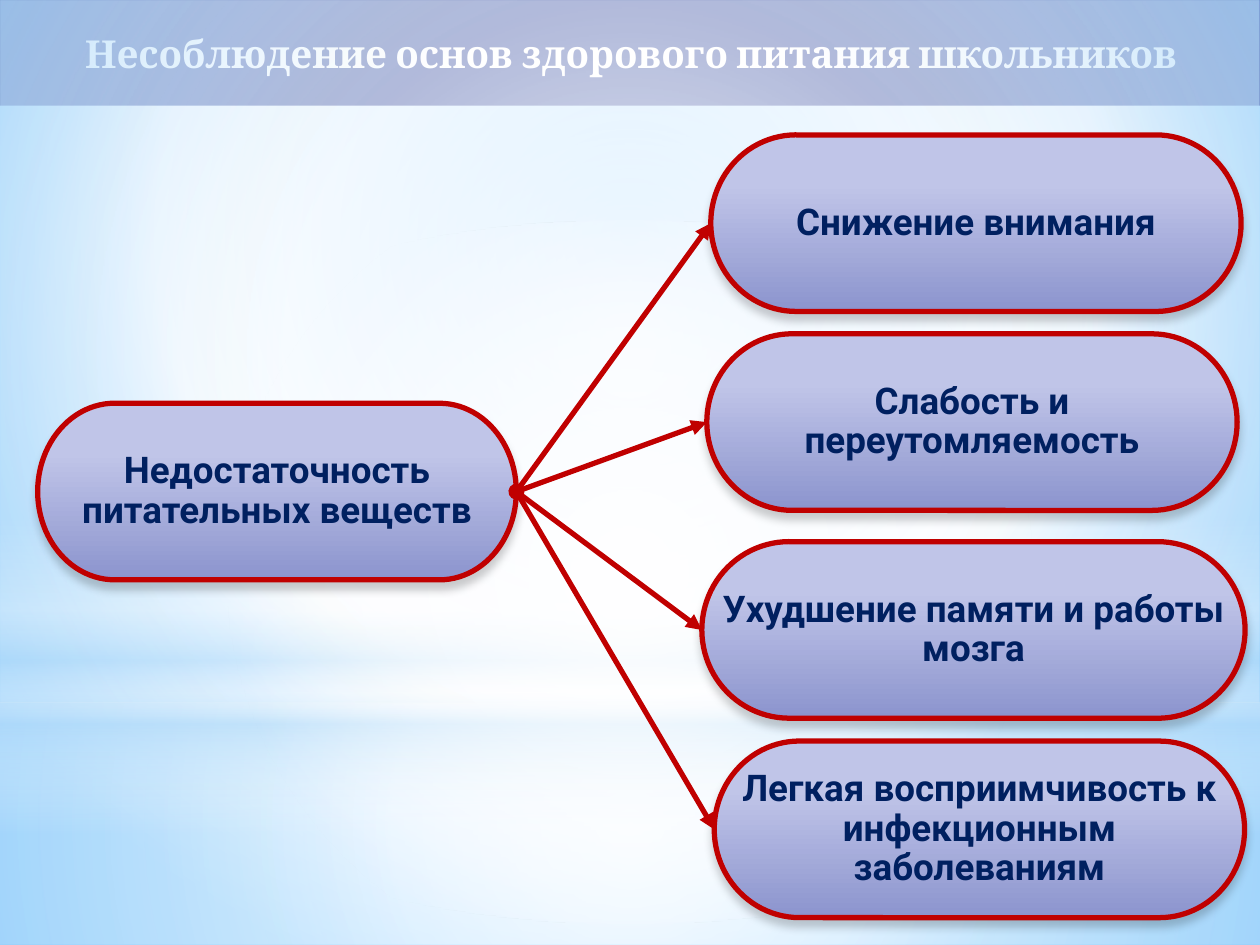
from dataclasses import dataclass
from typing import Optional

from lxml import etree
from pptx import Presentation
from pptx.dml.color import RGBColor
from pptx.enum.shapes import MSO_CONNECTOR, MSO_SHAPE
from pptx.enum.text import MSO_ANCHOR, MSO_AUTO_SIZE, PP_ALIGN
from pptx.oxml.ns import qn
from pptx.util import Cm, Pt

RECTANGLE, OVAL = MSO_SHAPE.RECTANGLE, MSO_SHAPE.OVAL
TERMINATOR = MSO_SHAPE.FLOWCHART_TERMINATOR
STRAIGHT = MSO_CONNECTOR.STRAIGHT
CENTER, MIDDLE = PP_ALIGN.CENTER, MSO_ANCHOR.MIDDLE
NO_AUTOFIT = MSO_AUTO_SIZE.NONE
LEFT_SITE, RIGHT_SITE = 1, 3
PAGE_WIDTH, PAGE_HEIGHT = 25.4, 19.05
PILL_HEIGHT = 3.56


@dataclass(frozen=True)
class Theme:
    banner: str = "31489F"
    title_text: str = "FFFFFF"
    label_text: str = "002060"
    accent: str = "C00000"
    pill_top: str = "C0C5E8"
    pill_bottom: str = "8C94CE"
    shadow: str = "000000"
    white: str = "FFFFFF"
    haze: str = "B4DCFA"
    sky_center: str = "9ED5FF"
    sky_edge: str = "5BB9FF"
    title_font: str = "Cambria"
    label_font: str = "Roboto"
    title_size: int = 22
    label_size: int = 21
    line_width: int = 3


THEME = Theme()


@dataclass(frozen=True)
class Stop:
    position: int
    color: str
    opacity: int = 100


@dataclass(frozen=True)
class Gradient:
    stops: tuple[Stop, ...]
    focus: Optional[tuple[int, int, int, int]] = None


@dataclass(frozen=True)
class Layer:
    shape_type: MSO_SHAPE
    top: float
    height: float
    gradient: Gradient


@dataclass(frozen=True)
class Pill:
    text: str
    left: float
    top: float
    width: float = 10.69
    arrow_start: str = "oval"


CENTERED = (50, 50, 50, 50)
SKY = Gradient(
    (Stop(0, THEME.sky_center), Stop(60, THEME.white), Stop(100, THEME.sky_edge)),
    (20, 10, 20, 60),
)
PILL_FILL = Gradient((Stop(28, THEME.pill_top), Stop(100, THEME.pill_bottom)))
LAYERS = (
    Layer(RECTANGLE, 14.17, 4.88, Gradient(
        (Stop(0, THEME.white, 91), Stop(37, THEME.white, 76), Stop(100, THEME.haze, 79)),
        CENTERED)),
    Layer(RECTANGLE, 0, 14.17, Gradient(
        (Stop(0, THEME.white, 89), Stop(48, THEME.white, 62), Stop(100, THEME.haze, 79)),
        CENTERED)),
    Layer(RECTANGLE, 10.46, 6.35, Gradient(
        (Stop(0, THEME.white, 0), Stop(29, THEME.white, 30), Stop(45, THEME.haze, 40),
         Stop(55, THEME.white, 26), Stop(65, THEME.haze, 60), Stop(100, THEME.white, 0)))),
    Layer(OVAL, 4.45, 14.17, Gradient(
        (Stop(0, THEME.white), Stop(56, THEME.white, 0)), CENTERED)),
)
CAUSE = Pill("Недостаточность питательных веществ", 0.76, 8.13, 9.65)
EFFECTS = (
    Pill("Снижение внимания", 14.33, 2.72),
    Pill("Слабость и переутомляемость", 14.25, 6.73),
    Pill("Ухудшение памяти и работы мозга", 14.15, 10.92, 10.95, "diamond"),
    Pill("Легкая восприимчивость к инфекционным заболеваниям", 14.4, 14.94,
         arrow_start="diamond"),
)


def add_element(parent, tag: str, **attributes):
    return etree.SubElement(
        parent, qn(tag), {name: str(value) for name, value in attributes.items()})


def add_color(parent, color: str, opacity: int) -> None:
    node = add_element(parent, "a:srgbClr", val=color)
    if opacity < 100:
        add_element(node, "a:alpha", val=opacity * 1000)


def apply_gradient(fill, properties, gradient: Gradient) -> None:
    fill.solid()
    fill.fore_color.rgb = RGBColor.from_string(THEME.white)
    node = etree.Element(qn("a:gradFill"), rotWithShape="1")
    stop_list = add_element(node, "a:gsLst")
    for stop in gradient.stops:
        stop_node = add_element(stop_list, "a:gs", pos=stop.position * 1000)
        add_color(stop_node, stop.color, stop.opacity)
    if gradient.focus:
        sides = {side: value * 1000 for side, value in zip("ltrb", gradient.focus)}
        add_element(add_element(node, "a:path", path="circle"), "a:fillToRect", **sides)
    else:
        add_element(node, "a:lin", ang=90 * 60000, scaled=0)
    properties.replace(properties.find(qn("a:solidFill")), node)


def format_text(frame, text: str, font_name: str, size: int, color: str):
    frame.text = text
    frame.word_wrap = True
    frame.auto_size = NO_AUTOFIT
    frame.vertical_anchor = MIDDLE
    para = frame.paragraphs[0]
    para.alignment = CENTER
    font = para.runs[0].font
    font.name, font.size, font.bold = font_name, Pt(size), True
    font.color.rgb = RGBColor.from_string(color)
    return para


def format_line(line) -> None:
    line.color.rgb = RGBColor.from_string(THEME.accent)
    line.width = Pt(THEME.line_width)


def draw_layer(page, layer: Layer) -> None:
    shape = page.shapes.add_shape(
        layer.shape_type, 0, Cm(layer.top), Cm(PAGE_WIDTH), Cm(layer.height))
    shape.shadow.inherit = False
    shape.line.fill.background()
    apply_gradient(shape.fill, shape.element.spPr, layer.gradient)


def draw_pill(page, pill: Pill):
    bounds = (Cm(pill.left), Cm(pill.top), Cm(pill.width), Cm(PILL_HEIGHT))
    shape = page.shapes.add_shape(TERMINATOR, *bounds)
    properties = shape.element.spPr
    apply_gradient(shape.fill, properties, PILL_FILL)
    format_line(shape.line)
    shape.shadow.inherit = False
    shadow = add_element(
        properties.find(qn("a:effectLst")), "a:outerShdw", blurRad=Pt(5), dist=Pt(4),
        dir=90 * 60000, rotWithShape=0)
    add_color(shadow, THEME.shadow, 20)

    frame = page.shapes.add_textbox(*bounds).text_frame
    frame.margin_left = frame.margin_right = Cm(0.03)
    frame.margin_top = frame.margin_bottom = Cm(0.03)
    para = format_text(
        frame, pill.text, THEME.label_font, THEME.label_size, THEME.label_text)
    para.line_spacing = 0.9
    return shape


def draw_arrow(page, source, target, start: str) -> None:
    arrow = page.shapes.add_connector(STRAIGHT, 0, 0, 0, 0)
    arrow.begin_connect(source, RIGHT_SITE)
    arrow.end_connect(target, LEFT_SITE)
    format_line(arrow.line)
    properties = arrow.element.spPr
    outline = properties.find(qn("a:ln"))
    add_element(outline, "a:headEnd", type=start)
    add_element(outline, "a:tailEnd", type="triangle")
    add_element(properties, "a:effectLst")


def draw_title(page, text: str) -> None:
    title = page.shapes.title
    title.left, title.top, title.width, title.height = 0, 0, Cm(25.45), Cm(2.13)
    title.fill.solid()
    title.fill.fore_color.rgb = RGBColor.from_string(THEME.banner)
    format_text(
        title.text_frame, text, THEME.title_font, THEME.title_size, THEME.title_text)


def main() -> None:
    deck = Presentation()
    deck.slide_width, deck.slide_height = Cm(PAGE_WIDTH), Cm(PAGE_HEIGHT)
    page = deck.slides.add_slide(deck.slide_layouts.get_by_name("Title Only"))
    background = page.background.fill
    background.solid()
    apply_gradient(background, next(page.element.iter(qn("p:bgPr"))), SKY)
    for layer in LAYERS:
        draw_layer(page, layer)
    cause = draw_pill(page, CAUSE)
    for effect in EFFECTS:
        draw_arrow(page, cause, draw_pill(page, effect), effect.arrow_start)
    draw_title(page, "Несоблюдение основ здорового питания школьников")
    deck.save("out.pptx")


if __name__ == "__main__":
    main()
